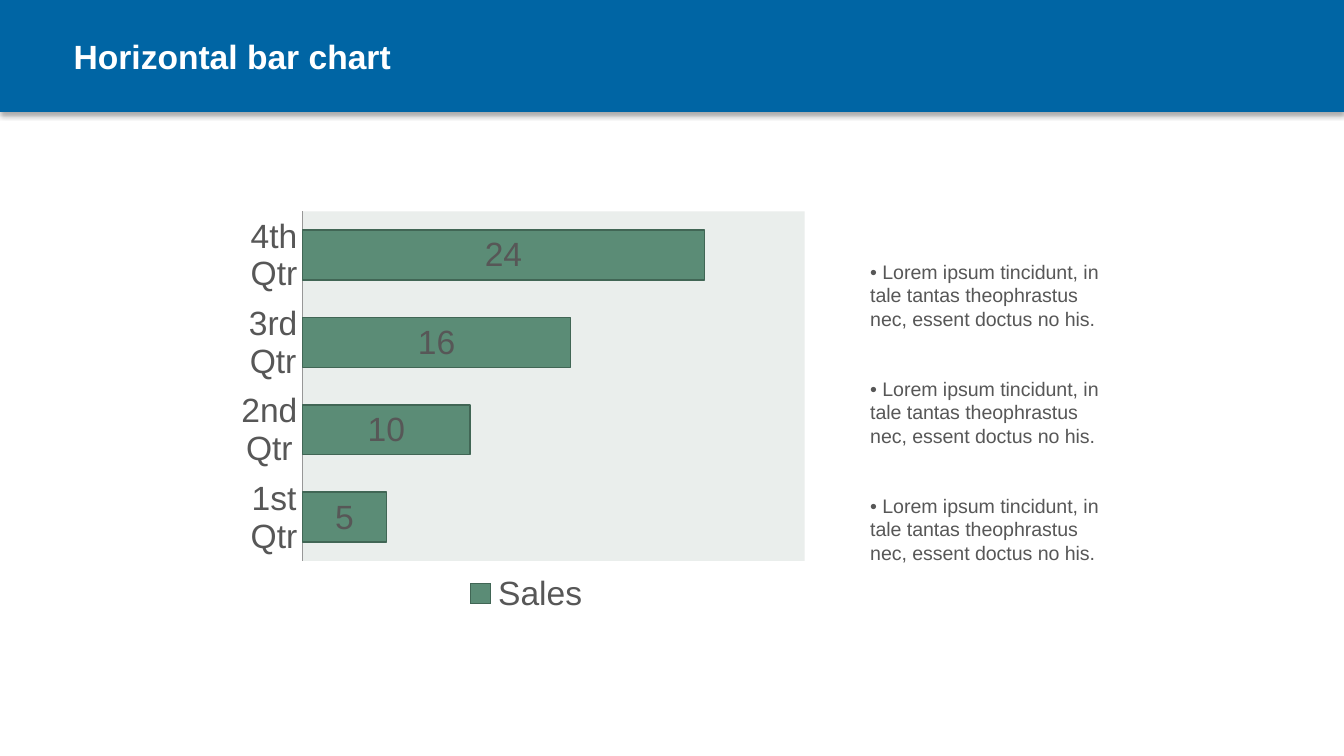
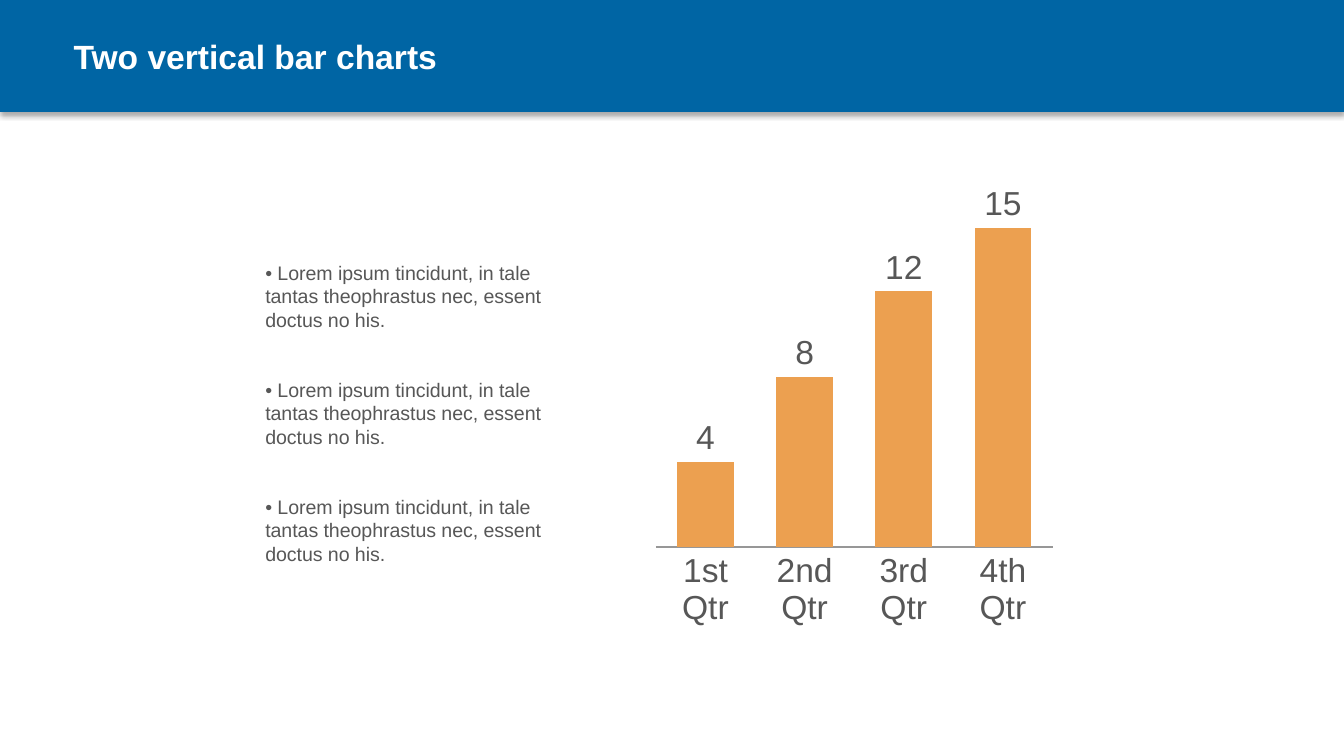
import pptx
import pptx.util
import pptx.chart.data
import pptx.dml.color
import pptx.enum.chart
import pptx.enum.shapes
import pptx.enum.text
import pptx.oxml
import pptx.oxml.ns

PX = 9144000 / 1344  # EMU per px
COLORS = {
    "band": "0065A4", "white": "FFFFFF", "text": "575757", "axis": "979797",
    "plot": "EAEEEC", "green": "5B8C76", "green_line": "416655", "orange": "ECA050",
}
RGB = {name: pptx.dml.color.RGBColor.from_string(value) for name, value in COLORS.items()}
FONT = "Arial"
LOREM = "• Lorem ipsum tincidunt, in tale tantas theophrastus nec, essent doctus no his."
QUARTERS = ["1st Qtr", "2nd Qtr", "3rd Qtr", "4th Qtr"]
NAMESPACES = pptx.oxml.ns.nsdecls("a", "c")
BAND_SHADOW = (
    f'<a:effectLst {NAMESPACES}><a:outerShdw blurRad="38100" dist="22860" dir="5400000" '
    'rotWithShape="0"><a:srgbClr val="000000"><a:alpha val="35000"/></a:srgbClr>'
    "</a:outerShdw></a:effectLst>"
)
ChartType = pptx.enum.chart.XL_CHART_TYPE
LabelPosition = pptx.enum.chart.XL_LABEL_POSITION

SLIDES = [
    {
        "title": "Horizontal bar chart", "notes": (857, 253, 261, 323),
        "type": ChartType.BAR_STACKED, "chart": (218, 194, 605, 437), "plot_height": 0.8,
        "series": "Sales", "values": [5, 10, 16, 24], "maximum": 30,
        "fill": "green", "line": "green_line", "labels": LabelPosition.CENTER,
        "background": "white", "plot_fill": "plot", "legend": (0.41, 0.87, 0.2, 0.09),
    },
    {
        "title": "Two vertical bar charts", "notes": (252, 254, 310, 345),
        "type": ChartType.COLUMN_CLUSTERED, "chart": (589, 185, 478, 442), "plot_height": 0.78,
        "series": "Series 1", "values": [4, 8, 12, 15], "maximum": 16,
        "fill": "orange", "line": None, "labels": LabelPosition.OUTSIDE_END,
        "background": None, "plot_fill": None, "legend": None,
    },
]


def emu(*lengths):
    """Turn px into EMU."""
    return [pptx.util.Emu(round(length * PX)) for length in lengths]


def chart_part(tag, frame=None, fill=None):
    """Make a manual layout from a frame, or a fill element from a colour name."""
    if fill:
        body = f'<a:solidFill><a:srgbClr val="{COLORS[fill]}"/></a:solidFill><a:ln><a:noFill/></a:ln>'
    else:
        target = '<c:layoutTarget val="inner"/>' if tag == "plot" else ""
        modes = '<c:xMode val="edge"/><c:yMode val="edge"/>'
        sizes = "".join(f'<c:{key} val="{value}"/>' for key, value in zip("xywh", frame))
        body = f"<c:manualLayout>{target}{modes}{sizes}</c:manualLayout>"
    name = "spPr" if fill else "layout"
    return pptx.oxml.parse_xml(f"<c:{name} {NAMESPACES}>{body}</c:{name}>")


deck = pptx.Presentation()
deck.slide_width, deck.slide_height = emu(1344, 756)

for content in SLIDES:
    page = deck.slides.add_slide(deck.slide_layouts[6])

    # Title band
    band = page.shapes.add_shape(pptx.enum.shapes.MSO_SHAPE.RECTANGLE, *emu(0, 0, 1344, 112))
    band.fill.solid()
    band.fill.fore_color.rgb = RGB["band"]
    band.line.fill.background()
    band._element.spPr.append(pptx.oxml.parse_xml(BAND_SHADOW))

    title = page.shapes.add_textbox(*emu(67, 1, 1210, 82)).text_frame
    title.word_wrap = True
    title.vertical_anchor = pptx.enum.text.MSO_ANCHOR.BOTTOM
    title.margin_left = title.margin_right = pptx.util.Inches(0.05)
    title.text = content["title"]
    heading = title.paragraphs[0]
    heading.line_spacing = 0.9
    heading.font.name = FONT
    heading.font.size = pptx.util.Pt(18)
    heading.font.bold = True
    heading.font.color.rgb = RGB["white"]

    # Notes beside the chart
    notes = page.shapes.add_textbox(*emu(*content["notes"])).text_frame
    notes.word_wrap = True
    notes.text = "\n".join([LOREM] * 3)
    for index, para in enumerate(notes.paragraphs):
        if index:
            para.space_before = pptx.util.Pt(25)
        para.font.name = FONT
        para.font.size = pptx.util.Pt(10.5)
        para.font.color.rgb = RGB["text"]

    # Chart
    data = pptx.chart.data.CategoryChartData()
    data.categories = QUARTERS
    data.add_series(content["series"], content["values"])
    chart = page.shapes.add_chart(content["type"], *emu(*content["chart"]), data).chart
    chart.has_title = False
    chart.font.name = FONT
    chart.font.size = pptx.util.Pt(18)
    chart.font.color.rgb = RGB["text"]

    category_axis = chart.category_axis
    category_axis.major_tick_mark = pptx.enum.chart.XL_TICK_MARK.NONE
    category_axis.format.line.color.rgb = RGB["axis"]
    category_axis.format.line.width = pptx.util.Pt(0.75)
    value_axis = chart.value_axis
    value_axis.visible = False
    value_axis.has_major_gridlines = False
    value_axis.minimum_scale = 0
    value_axis.maximum_scale = content["maximum"]

    plot = chart.plots[0]
    plot.gap_width = 75
    plot.vary_by_categories = False
    plot.has_data_labels = True
    labels = plot.data_labels
    labels.show_value = True
    labels.position = content["labels"]
    labels.font.name = FONT
    labels.font.size = pptx.util.Pt(18)
    labels.font.color.rgb = RGB["text"]

    bars = plot.series[0].format
    bars.fill.solid()
    bars.fill.fore_color.rgb = RGB[content["fill"]]
    if content["line"]:
        bars.line.color.rgb = RGB[content["line"]]
        bars.line.width = pptx.util.Pt(0.75)

    chart_element = chart._chartSpace.chart
    plot_area = chart_element.plotArea
    for layout in plot_area.findall(pptx.oxml.ns.qn("c:layout")):
        plot_area.remove(layout)
    plot_area.insert(0, chart_part("plot", (0.14, 0.04, 0.83, content["plot_height"])))
    if content["plot_fill"]:
        plot_area.append(chart_part("plot", fill=content["plot_fill"]))
    if content["background"]:
        chart_element.addnext(chart_part("chart", fill=content["background"]))

    chart.has_legend = content["legend"] is not None
    if chart.has_legend:
        legend = chart.legend
        legend.position = pptx.enum.chart.XL_LEGEND_POSITION.TOP
        legend.include_in_layout = False
        legend.font.name = FONT
        legend.font.size = pptx.util.Pt(18)
        legend.font.color.rgb = RGB["text"]
        for layout in legend._element.findall(pptx.oxml.ns.qn("c:layout")):
            legend._element.remove(layout)
        position = legend._element.find(pptx.oxml.ns.qn("c:legendPos"))
        position.addnext(chart_part("legend", content["legend"]))

deck.save("out.pptx")
